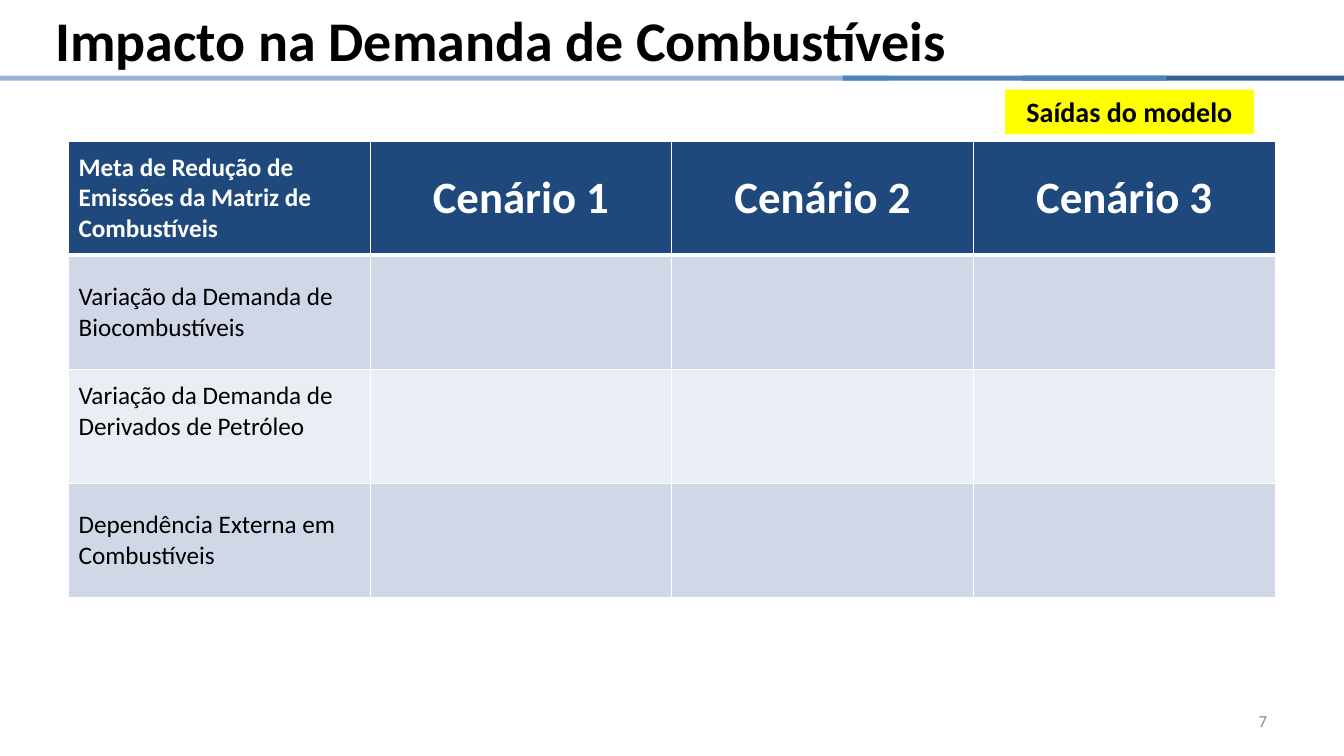
"""Builds the slide on fuel demand impact with its scenario table."""
from dataclasses import dataclass

from lxml import etree
from pptx import Presentation
from pptx import util as u
from pptx.dml.color import RGBColor
from pptx.enum import shapes, text
from pptx.oxml.ns import qn

COLOURS = {
    "white": "FFFFFF", "black": "000000", "grey": "898989", "yellow": "FFFF00",
    "light_bar": "95B3D7", "dark_bar": "376092", "middle_bar": "4F81BD",
    "header": "1F497D", "band_dark": "D0D8E8", "band_light": "E9EDF4",
}
FONT = "Calibri"
SLIDE_WIDTH, SLIDE_HEIGHT = u.Inches(13.333), u.Inches(7.5)
LEFT, CENTER, RIGHT = text.PP_ALIGN.LEFT, text.PP_ALIGN.CENTER, text.PP_ALIGN.RIGHT
MIDDLE, TOP = text.MSO_ANCHOR.MIDDLE, text.MSO_ANCHOR.TOP
HEADERS = ["Meta de Redução de Emissões da Matriz de Combustíveis",
           "Cenário 1", "Cenário 2", "Cenário 3"]
INDICATORS = ["Variação da Demanda de Biocombustíveis",
              "Variação da Demanda de Derivados de Petróleo",
              "Dependência Externa em Combustíveis"]
RAISED_ROW = 2


@dataclass
class Area:
    """Position and size in percent of the slide."""
    left: float
    top: float
    width: float
    height: float

    def box(self) -> tuple[int, int, int, int]:
        """Return the area as lengths on the slide."""
        return (round(SLIDE_WIDTH * self.left / 100), round(SLIDE_HEIGHT * self.top / 100),
                round(SLIDE_WIDTH * self.width / 100), round(SLIDE_HEIGHT * self.height / 100))


@dataclass
class Style:
    """Look of a piece of text."""
    size: int
    colour: str = "black"
    bold: bool = False
    align: text.PP_ALIGN = LEFT


@dataclass
class Bar:
    """A coloured strip of the rule under the title."""
    left: float
    width: float
    colour: str


@dataclass
class Label:
    """A text box with an optional fill."""
    wording: str
    area: Area
    style: Style
    anchor: text.MSO_ANCHOR = MIDDLE
    fill: str | None = None


BARS = [Bar(0, 66.08, "light_bar"), Bar(76.12, 23.88, "dark_bar"),
        Bar(62.7, 24.08, "middle_bar")]
LABELS = [
    Label("7", Area(71.7, 92.67, 23.32, 5.33), Style(12, "grey", align=RIGHT)),
    Label("Impacto na Demanda de Combustíveis", Area(3.38, 1.47, 78, 7.33),
          Style(40, bold=True)),
    Label("Saídas do modelo", Area(74.78, 11.87, 18.52, 5.87),
          Style(20, bold=True, align=CENTER), TOP, "yellow"),
]
TABLE_AREA = Area(5.1, 18.67, 89.78, 60.4)


def rgb(name: str) -> RGBColor:
    """Look up a named colour."""
    return RGBColor.from_string(COLOURS[name])


def write(frame, wording: str, style: Style) -> None:
    """Set the wording of a text frame and format it."""
    frame.text = wording
    paragraph = frame.paragraphs[0]
    paragraph.alignment = style.align
    for run in paragraph.runs:
        run.font.name, run.font.size = FONT, u.Pt(style.size)
        run.font.bold, run.font.color.rgb = style.bold, rgb(style.colour)


def draw_bar(slide, bar: Bar) -> None:
    """Draw one strip of the rule."""
    area = Area(bar.left, 10, bar.width, 0.67)
    shape = slide.shapes.add_shape(shapes.MSO_SHAPE.RECTANGLE, *area.box())
    shape.shadow.inherit = False
    shape.fill.solid()
    shape.fill.fore_color.rgb = rgb(bar.colour)
    shape.line.fill.background()


def draw_label(slide, label: Label) -> None:
    """Draw one text box."""
    shape = slide.shapes.add_textbox(*label.area.box())
    frame = shape.text_frame
    frame.word_wrap, frame.vertical_anchor = True, label.anchor
    write(frame, label.wording, label.style)
    if label.fill:
        shape.fill.solid()
        shape.fill.fore_color.rgb = rgb(label.fill)


def set_borders(cell, widths: dict[str, int]) -> None:
    """Give each side of a cell a white line of a width in points."""
    properties = cell._tc.get_or_add_tcPr()
    for index, (side, width) in enumerate(widths.items()):
        line = etree.Element(qn(f"a:ln{side}"), w=str(u.Pt(width)))
        fill = etree.SubElement(line, qn("a:solidFill"))
        etree.SubElement(fill, qn("a:srgbClr"), val=COLOURS["white"])
        properties.insert(index, line)


def draw_table(slide) -> None:
    """Draw the scenario table with its banded rows."""
    rows = [HEADERS] + [[name] + [""] * (len(HEADERS) - 1) for name in INDICATORS]
    table = slide.shapes.add_table(len(rows), len(HEADERS), *TABLE_AREA.box()).table
    for row, wordings in enumerate(rows):
        fill = "header" if row == 0 else "band_dark" if row % 2 else "band_light"
        for column, wording in enumerate(wordings):
            cell = table.cell(row, column)
            cell.vertical_anchor = MIDDLE
            cell.fill.solid()
            cell.fill.fore_color.rgb = rgb(fill)
            set_borders(cell, {"L": 1, "R": 1, "T": 3 if row == 1 else 1,
                               "B": 3 if row == 0 else 1})
            if wording:
                style = Style(32 if column else 18, "black" if row else "white",
                              row == 0, CENTER if column else LEFT)
                write(cell.text_frame, wording, style)
    table.cell(RAISED_ROW, 0).margin_bottom = u.Inches(0.35)


def main() -> None:
    """Build and save the presentation."""
    presentation = Presentation()
    presentation.slide_width, presentation.slide_height = SLIDE_WIDTH, SLIDE_HEIGHT
    slide = presentation.slides.add_slide(presentation.slide_layouts[6])
    for bar in BARS:
        draw_bar(slide, bar)
    draw_table(slide)
    for label in LABELS:
        draw_label(slide, label)
    presentation.save("out.pptx")


if __name__ == "__main__":
    main()
